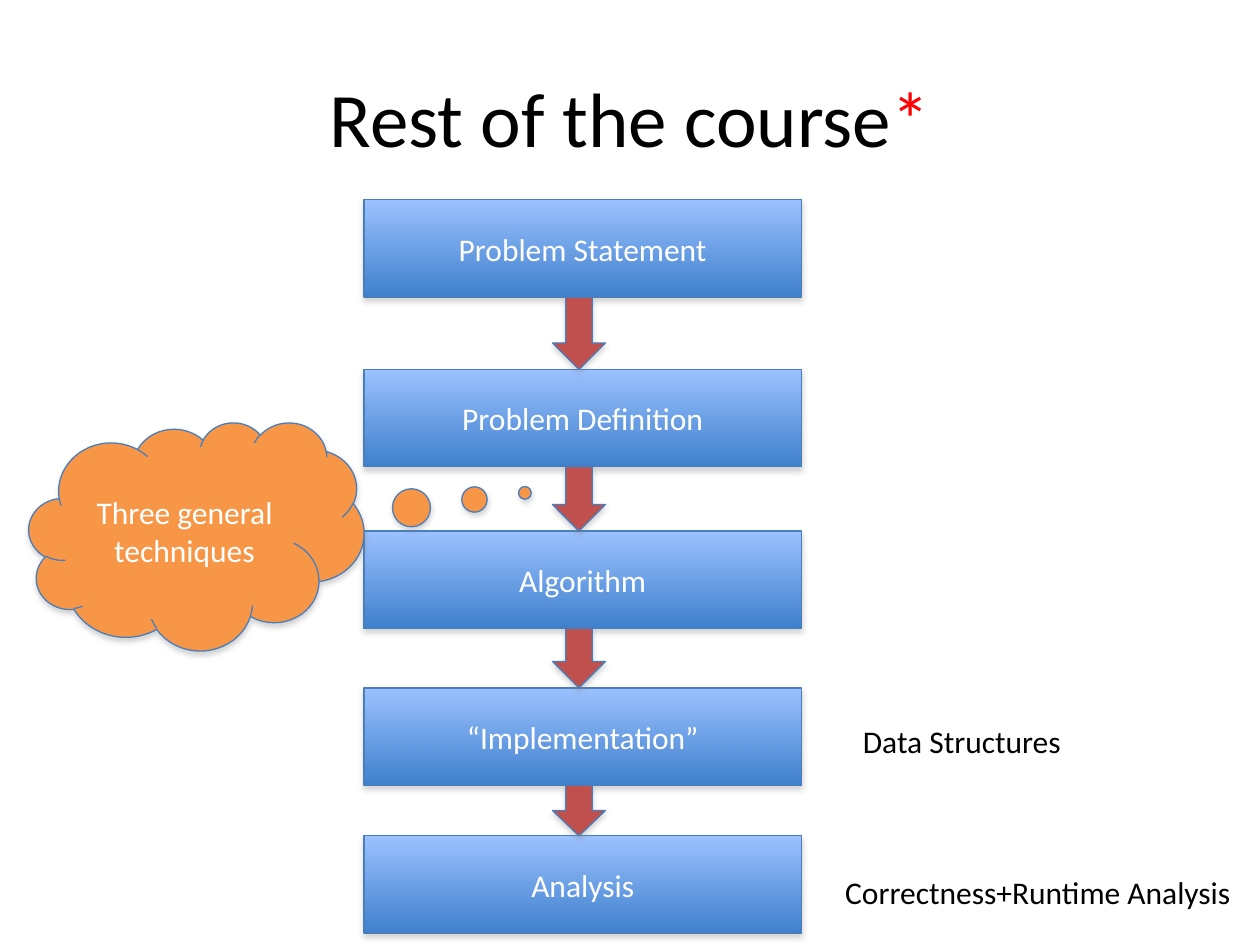
import pptx
import pptx.util
import pptx.dml.color
import pptx.enum.shapes
import pptx.enum.text
import pptx.oxml
import pptx.oxml.ns

COLORS = {
    "box_top": "9BC1FF", "box_bottom": "3F80CD", "outline": "4A7EBB",
    "arrow": "C0504D", "cloud": "F79646", "shadow": "808080",
    "white": "FFFFFF", "black": "000000", "star": "FF0000",
}
RGB = {name: pptx.dml.color.RGBColor.from_string(value) for name, value in COLORS.items()}
SHAPES = pptx.enum.shapes.MSO_SHAPE
CENTER = pptx.enum.text.PP_ALIGN.CENTER
LEFT = pptx.enum.text.PP_ALIGN.LEFT
MIDDLE = pptx.enum.text.MSO_ANCHOR.MIDDLE
SHADOW = (
    f'<a:outerShdw {pptx.oxml.ns.nsdecls("a")} blurRad="40000" dist="23000" dir="5400000" rotWithShape="0">'
    f'<a:srgbClr val="{COLORS["shadow"]}"><a:alpha val="35000"/></a:srgbClr></a:outerShdw>'
)

presentation = pptx.Presentation()
presentation.slide_width = pptx.util.Inches(10)
presentation.slide_height = pptx.util.Inches(7.5)
COLUMN = presentation.slide_width / 100
ROW = presentation.slide_height / 100
slide = presentation.slides.add_slide(presentation.slide_layouts[5])


def write(shape, runs, size, alignment):
    paragraph = shape.text_frame.paragraphs[0]
    paragraph.alignment = alignment
    for text, color in runs:
        run = paragraph.add_run()
        run.text = text
        for name, value in {"name": "Calibri", "size": pptx.util.Pt(size)}.items():
            setattr(run.font, name, value)
        run.font.color.rgb = RGB[color]


def add_block(kind, left, top, width, height, fill=None):
    shape = slide.shapes.add_shape(
        kind, round(left * COLUMN), round(top * ROW), round(width * COLUMN), round(height * ROW))
    if fill:
        shape.fill.solid()
        shape.fill.fore_color.rgb = RGB[fill]
    else:
        shape.fill.gradient()
        shape.fill.gradient_angle = 270
        for stop, color in zip(shape.fill.gradient_stops, ("box_top", "box_bottom")):
            stop.color.rgb = RGB[color]
    shape.line.color.rgb = RGB["outline"]
    shape.line.width = pptx.util.Pt(0.75)
    shape.shadow.inherit = False
    effects = shape._element.spPr.find(pptx.oxml.ns.qn("a:effectLst"))
    effects.append(pptx.oxml.parse_xml(SHADOW))
    shape.text_frame.vertical_anchor = MIDDLE
    return shape


title = slide.shapes.title
title_box = {"left": 5 * COLUMN, "top": 4 * ROW, "width": 90 * COLUMN, "height": 16.67 * ROW}
for name, value in title_box.items():
    setattr(title, name, round(value))
title.text_frame.vertical_anchor = MIDDLE
write(title, [("Rest of the course", "black"), ("*", "star")], 44, CENTER)

BOX_HEIGHT = 10.3
steps = [
    ("Problem Statement", 21.15),
    ("Problem Definition", 39.1),
    ("Algorithm", 56.2),
    ("“Implementation”", 72.8),
    ("Analysis", 88.45),
]
for text, top in steps:
    box = add_block(SHAPES.RECTANGLE, 28.9, top, 34.7, BOX_HEIGHT)
    write(box, [(text, "white")], 18, CENTER)

for (_, top), (_, next_top) in zip(steps, steps[1:]):
    start = top + BOX_HEIGHT
    add_block(SHAPES.DOWN_ARROW, 43.85, start, 4.2, next_top - start, "arrow")

for text, left, top, width in [
    ("Correctness+Runtime Analysis", 66.1, 91.75, 32.9),
    ("Data Structures", 67.5, 75.7, 17.9),
]:
    label = slide.shapes.add_textbox(
        round(left * COLUMN), round(top * ROW), round(width * COLUMN), round(5.33 * ROW))
    label.text_frame.word_wrap = False
    label.text_frame.auto_size = pptx.enum.text.MSO_AUTO_SIZE.SHAPE_TO_FIT_TEXT
    write(label, [(text, "black")], 18, LEFT)

cloud = add_block(SHAPES.CLOUD_CALLOUT, 2.3, 44.67, 26.6, 24.13, "cloud")
cloud.adjustments[0] = 0.98
cloud.adjustments[1] = -0.19
write(cloud, [("Three general techniques", "white")], 18, CENTER)

presentation.save("out.pptx")
